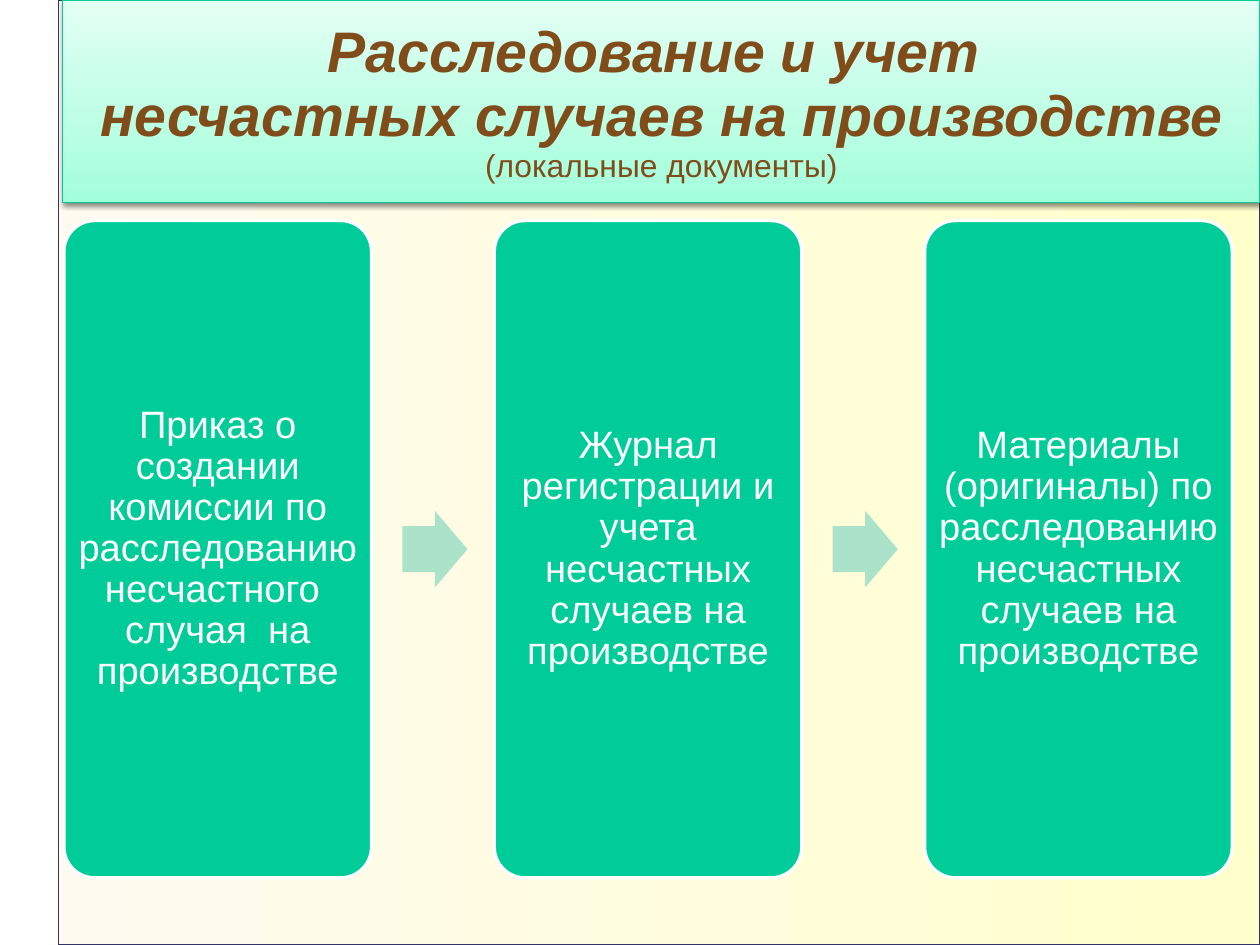
import pptx
import pptx.dml.color
import pptx.enum.shapes
import pptx.enum.text
import pptx.oxml
import pptx.util
from pptx.util import Inches

SHAPES = pptx.enum.shapes.MSO_SHAPE
SLIDE_WIDTH = 28 / 2.54
SLIDE_HEIGHT = SLIDE_WIDTH * 3 / 4
BROWN = "804C19"
GREEN = "00CC99"
DOCUMENTS = [
    "Приказ о создании комиссии по расследованию несчастного  случая  на производстве",
    "Журнал регистрации и учета несчастных случаев на производстве",
    "Материалы (оригиналы) по расследованию несчастных случаев на производстве",
]
SHADOW = (
    '<a:effectLst xmlns:a="http://schemas.openxmlformats.org/drawingml/2006/main">'
    '<a:outerShdw blurRad="40000" dist="23000" dir="5400000" rotWithShape="0">'
    '<a:srgbClr val="000000"><a:alpha val="45000"/></a:srgbClr>'
    "</a:outerShdw></a:effectLst>"
)


def color(value):
    return pptx.dml.color.RGBColor.from_string(value)


def add_block(slide, kind, left, top, width, height, fill=None, line=None,
              line_width=0.75, adjustments=()):
    shape = slide.shapes.add_shape(
        kind, Inches(left), Inches(top), Inches(width), Inches(height))
    shape.shadow.inherit = False
    for index, value in enumerate(adjustments):
        shape.adjustments[index] = value
    if fill:
        shape.fill.solid()
        shape.fill.fore_color.rgb = color(fill)
    if line:
        shape.line.color.rgb = color(line)
        shape.line.width = pptx.util.Pt(line_width)
    else:
        shape.line.fill.background()
    return shape


def set_gradient(shape, start, end, angle):
    shape.fill.gradient()
    shape.fill.gradient_angle = angle
    for stop, value, position in zip(shape.fill.gradient_stops, (start, end), (0, 1)):
        stop.color.rgb = color(value)
        stop.position = position


def add_shadow(shape):
    properties = shape.element.spPr
    properties.remove(properties.find(pptx.oxml.ns.qn("a:effectLst")))
    properties.append(pptx.oxml.parse_xml(SHADOW))


def prepare_text(shape, margins, line_spacing):
    """Centre the text both ways; margins are left, top, right, bottom."""
    frame = shape.text_frame
    frame.word_wrap = True
    frame.vertical_anchor = pptx.enum.text.MSO_ANCHOR.MIDDLE
    (frame.margin_left, frame.margin_top,
     frame.margin_right, frame.margin_bottom) = map(Inches, margins)
    paragraph = frame.paragraphs[0]
    paragraph.alignment = pptx.enum.text.PP_ALIGN.CENTER
    paragraph.line_spacing = line_spacing
    return paragraph


def add_text(paragraph, text, size, text_color, bold=False, italic=False):
    run = paragraph.add_run()
    run.text = text
    run.font.name = "Arial"
    run.font.size = pptx.util.Pt(size)
    run.font.color.rgb = color(text_color)
    run.font.bold = bold
    run.font.italic = italic


def add_backdrop(slide):
    left = 0.51
    backdrop = add_block(slide, SHAPES.ROUNDED_RECTANGLE, left, 0, SLIDE_WIDTH - left,
                         SLIDE_HEIGHT, line="333366", adjustments=[0])
    set_gradient(backdrop, "FFFBF0", "FFFFCC", 0)


def add_title(slide):
    left = 0.55
    title = add_block(slide, SHAPES.RECTANGLE, left, 0, SLIDE_WIDTH - left, 1.77,
                      line=GREEN)
    set_gradient(title, "E3FFF4", "A3FFDB", 270)
    add_shadow(title)
    paragraph = prepare_text(title, (0, 0.03, 0, 0), 0.93)
    for line in ("Расследование и учет ", " несчастных случаев на производстве "):
        add_text(paragraph, line, 36, BROWN, bold=True, italic=True)
        paragraph.add_line_break()
    add_text(paragraph, "(локальные документы)", 20, BROWN)


def add_process(slide, documents):
    first_left, last_left = 0.56, 8.09
    step = (last_left - first_left) / (len(documents) - 1)
    for index, document in enumerate(documents):
        card_left = first_left + index * step
        card = add_block(slide, SHAPES.ROUNDED_RECTANGLE, card_left, 1.93, 2.69, 5.75,
                         fill=GREEN, line="FFFFFF", line_width=2, adjustments=[0.1])
        paragraph = prepare_text(card, (0.02, 0.02, 0.02, 0.02), 0.9)
        add_text(paragraph, document, 24, "FFFFFF")
        if index < len(documents) - 1:
            add_block(slide, SHAPES.RIGHT_ARROW, card_left + 2.96, 4.47, 0.57, 0.67,
                      fill="ABE2CA", adjustments=[0.6, 0.5])


def main():
    presentation = pptx.Presentation()
    presentation.slide_width = Inches(SLIDE_WIDTH)
    presentation.slide_height = Inches(SLIDE_HEIGHT)
    slide = presentation.slides.add_slide(presentation.slide_layouts[6])
    add_backdrop(slide)
    add_title(slide)
    add_process(slide, DOCUMENTS)
    presentation.save("out.pptx")


if __name__ == "__main__":
    main()
